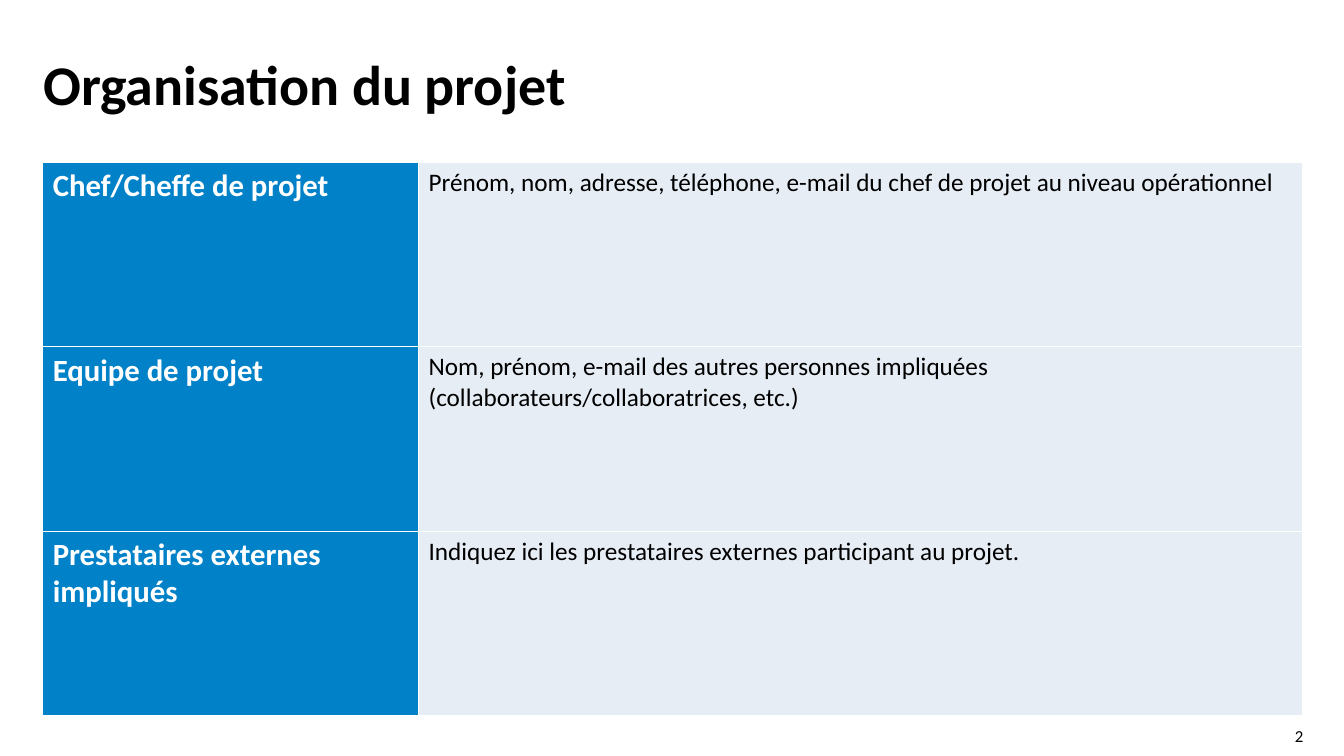
from dataclasses import dataclass

from lxml import etree
from pptx import Presentation
from pptx.dml.color import RGBColor
from pptx.enum import text
from pptx.oxml import ns
from pptx.util import Pt

FONT = "Calibri"
COLOURS = {
    "black": "000000",
    "white": "FFFFFF",
    "label": "0081C8",
    "detail": "E7EDF5",
}
COLUMN_WIDTHS = (268.5, 631.5)
ROW_HEIGHT = 131.75


@dataclass(frozen=True)
class Style:
    size: float
    colour: str = "black"
    bold: bool = False
    fill: str = "white"


@dataclass(frozen=True)
class TextBox:
    wording: str
    left: float
    top: float
    width: float
    height: float
    style: Style
    align: text.PP_ALIGN = text.PP_ALIGN.LEFT
    anchor: text.MSO_ANCHOR = text.MSO_ANCHOR.TOP
    line_spacing: float = 1.0


@dataclass(frozen=True)
class Role:
    label: str
    detail: str


LABEL = Style(22, "white", True, "label")
DETAIL = Style(18, fill="detail")

BOXES = (
    TextBox("2", 897, 518.5, 34, 14.5, Style(12),
            text.PP_ALIGN.RIGHT, text.MSO_ANCHOR.MIDDLE),
    TextBox("Organisation du projet", 31, 40.5, 720, 61, Style(40, bold=True),
            line_spacing=0.9),
)

ROLES = (
    Role("Chef/Cheffe de projet",
         "Prénom, nom, adresse, téléphone, e-mail du chef de projet au niveau opérationnel"),
    Role("Equipe de projet",
         "Nom, prénom, e-mail des autres personnes impliquées "
         "(collaborateurs/collaboratrices, etc.)"),
    Role("Prestataires externes impliqués",
         "Indiquez ici les prestataires externes participant au projet."),
)


def rgb(name: str) -> RGBColor:
    return RGBColor.from_string(COLOURS[name])


def add_span(para, wording: str, style: Style) -> None:
    span = para.add_run()
    span.text = wording
    span.font.name = FONT
    span.font.size = Pt(style.size)
    span.font.bold = style.bold
    span.font.color.rgb = rgb(style.colour)


def add_text_box(page, item: TextBox) -> None:
    box = page.shapes.add_textbox(
        Pt(item.left), Pt(item.top), Pt(item.width), Pt(item.height))
    frame = box.text_frame
    frame.word_wrap = True
    frame.vertical_anchor = item.anchor
    frame.margin_left = frame.margin_right = Pt(0)
    frame.margin_top = frame.margin_bottom = Pt(0)
    para = frame.paragraphs[0]
    para.alignment = item.align
    para.line_spacing = item.line_spacing
    add_span(para, item.wording, item.style)


def add_borders(cell, colour: str, width: float) -> None:
    properties = cell._tc.get_or_add_tcPr()
    for index, side in enumerate(("a:lnL", "a:lnR", "a:lnT", "a:lnB")):
        line = etree.Element(ns.qn(side), w=str(Pt(width)))
        fill = etree.SubElement(line, ns.qn("a:solidFill"))
        etree.SubElement(fill, ns.qn("a:srgbClr"), val=COLOURS[colour])
        properties.insert(index, line)


def fill_cell(cell, wording: str, style: Style) -> None:
    cell.fill.solid()
    cell.fill.fore_color.rgb = rgb(style.fill)
    add_borders(cell, "white", 1)
    add_span(cell.text_frame.paragraphs[0], wording, style)


def add_role_table(page, roles: tuple[Role, ...]) -> None:
    table = page.shapes.add_table(
        len(roles), len(COLUMN_WIDTHS), Pt(30.5), Pt(116),
        Pt(sum(COLUMN_WIDTHS)), Pt(ROW_HEIGHT * len(roles))).table
    table.first_row = False
    table.horz_banding = False
    for column, width in zip(table.columns, COLUMN_WIDTHS):
        column.width = Pt(width)
    for row, role in zip(table.rows, roles):
        row.height = Pt(ROW_HEIGHT)
        fill_cell(row.cells[0], role.label, LABEL)
        fill_cell(row.cells[1], role.detail, DETAIL)


def main() -> None:
    deck = Presentation()
    deck.slide_width, deck.slide_height = Pt(960), Pt(540)
    page = deck.slides.add_slide(deck.slide_layouts[6])

    # Background
    page.background.fill.solid()
    page.background.fill.fore_color.rgb = rgb("white")

    # Project roles
    add_role_table(page, ROLES)

    # Page number and title
    for item in BOXES:
        add_text_box(page, item)

    deck.save("out.pptx")


if __name__ == "__main__":
    main()
